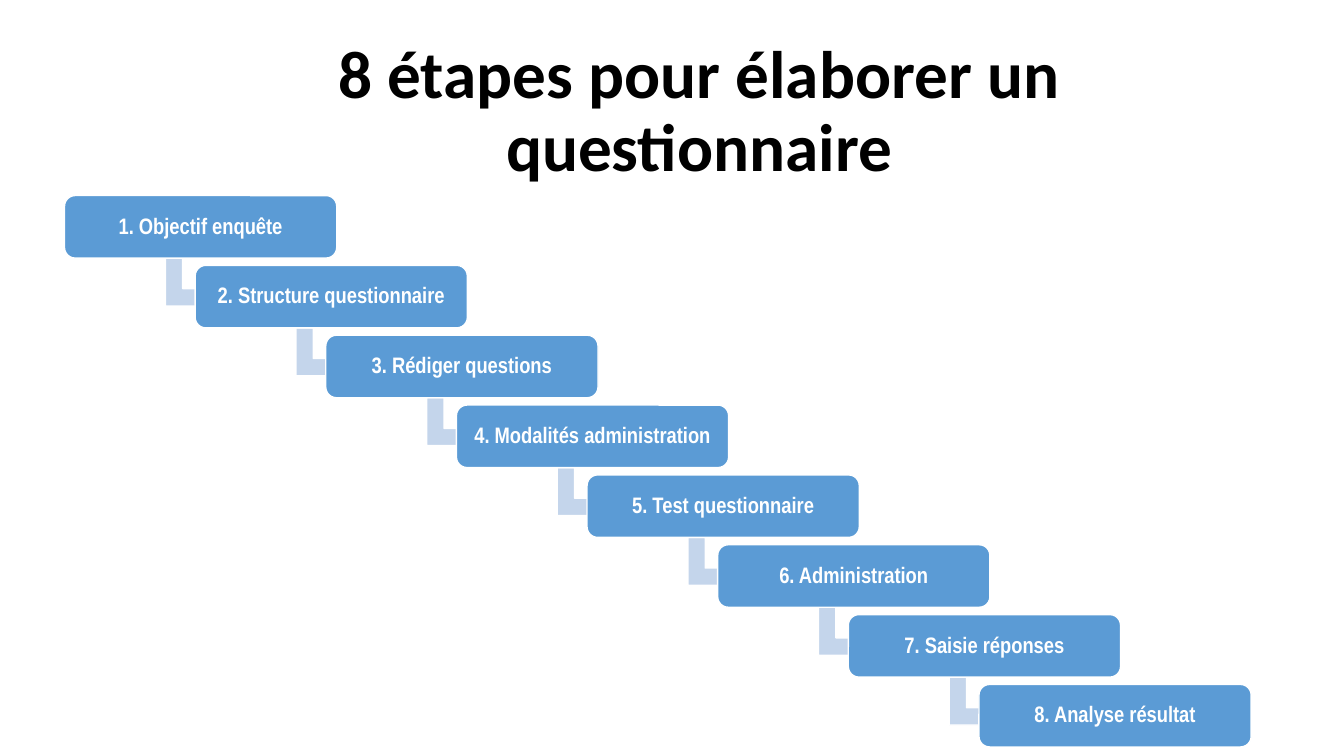
from pptx import Presentation
from pptx.dml.color import RGBColor
from pptx.enum.shapes import MSO_SHAPE
from pptx.enum.text import MSO_ANCHOR, PP_ALIGN
from pptx.util import Inches, Pt

COLORS = {"box": "5B9BD5", "arrow": "C4D5EB", "white": "FFFFFF", "title": "000000"}
STEPS = [
    "Objectif enquête",
    "Structure questionnaire",
    "Rédiger questions",
    "Modalités administration",
    "Test questionnaire",
    "Administration",
    "Saisie réponses",
    "Analyse résultat",
]
FIRST_LEFT, FIRST_TOP = 0.64, 1.94
LAST_LEFT, LAST_TOP = 9.71, 6.79
BOX_WIDTH, BOX_HEIGHT = 2.7, 0.62
ARROW_SHIFT, ARROW_DROP = 1.04, 0.58
ARROW_WIDTH, ARROW_HEIGHT = 0.52, 0.6


class StaircaseSlide:
    """Hold the style and the current slide."""

    title_format = {"name": "Calibri", "size": Pt(48), "bold": True}
    step_format = {"name": "Arial Narrow", "size": Pt(16), "bold": True}

    def __init__(self, presentation):
        """Add a title-only slide."""
        self.slide = presentation.slides.add_slide(presentation.slide_layouts[5])

    def fill_text(self, shape, text, font_format, color, inset):
        """Put one centred paragraph into a shape."""
        frame = shape.text_frame
        frame.text = text
        frame_format = {"word_wrap": True, "vertical_anchor": MSO_ANCHOR.MIDDLE}
        for side in ("left", "right", "top", "bottom"):
            frame_format[f"margin_{side}"] = Inches(inset)
        for name, value in frame_format.items():
            setattr(frame, name, value)
        paragraph = frame.paragraphs[0]
        paragraph.alignment = PP_ALIGN.CENTER
        paragraph.line_spacing = 0.9
        font = paragraph.runs[0].font
        for name, value in font_format.items():
            setattr(font, name, value)
        font.color.rgb = RGBColor.from_string(COLORS[color])

    def title(self, text, left, top, width, height):
        """Place and fill the title placeholder."""
        shape = self.slide.shapes.title
        places = {"left": left, "top": top, "width": width, "height": height}
        for name, value in places.items():
            setattr(shape, name, Inches(value))
        self.fill_text(shape, text, self.title_format, "title", 0.1)

    def block(self, kind, color, adjustments, left, top, width, height):
        """Add a filled shape with a thin white outline."""
        shape = self.slide.shapes.add_shape(
            kind, Inches(left), Inches(top), Inches(width), Inches(height))
        shape.shadow.inherit = False
        for index, value in enumerate(adjustments):
            shape.adjustments[index] = value
        shape.fill.solid()
        shape.fill.fore_color.rgb = RGBColor.from_string(COLORS[color])
        shape.line.color.rgb = RGBColor.from_string(COLORS["white"])
        shape.line.width = Pt(1)
        return shape

    def arrow(self, left, top):
        """Add the elbow that leads down to the next step."""
        shape = self.block(MSO_SHAPE.BENT_UP_ARROW, "arrow", (0.33, 0.25, 0.36),
                           left, top, ARROW_WIDTH, ARROW_HEIGHT)
        shape.rotation = 90

    def step(self, text, left, top):
        """Add a labelled step box."""
        shape = self.block(MSO_SHAPE.ROUNDED_RECTANGLE, "box", (0.17,),
                           left, top, BOX_WIDTH, BOX_HEIGHT)
        self.fill_text(shape, text, self.step_format, "white", 0.07)


def main():
    """Build the slide and save it."""
    presentation = Presentation()
    presentation.slide_width = Inches(13.33)
    presentation.slide_height = Inches(7.5)
    staircase = StaircaseSlide(presentation)
    staircase.title("8 étapes pour élaborer un questionnaire", 1.45, 0.4, 10.97, 1.45)
    last = len(STEPS) - 1
    for index, label in enumerate(STEPS):
        left = FIRST_LEFT + index * (LAST_LEFT - FIRST_LEFT) / last
        top = FIRST_TOP + index * (LAST_TOP - FIRST_TOP) / last
        if index < last:
            staircase.arrow(left + ARROW_SHIFT, top + ARROW_DROP)
        staircase.step(f"{index + 1}. {label}", left, top)
    presentation.save("out.pptx")


if __name__ == "__main__":
    main()
